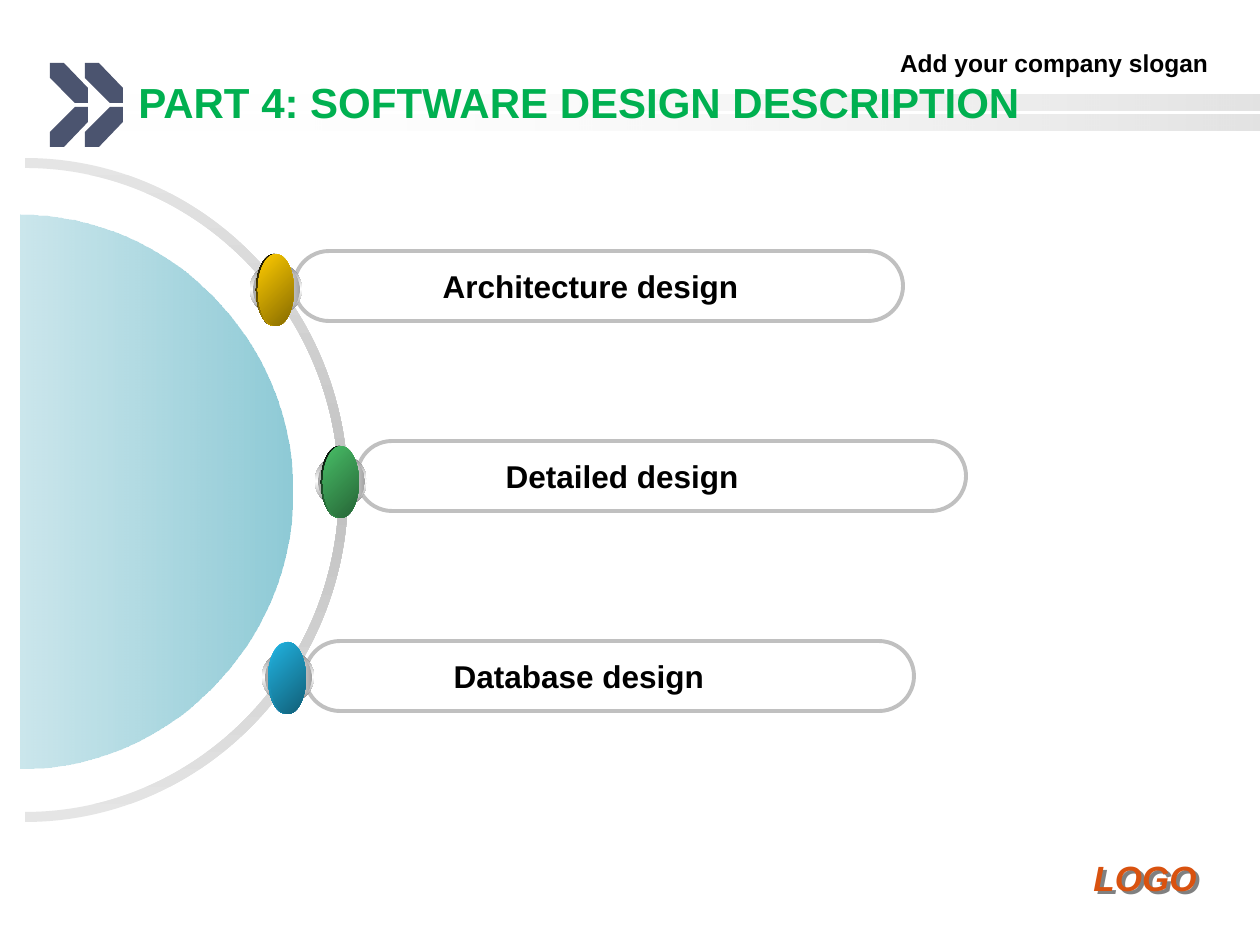
from lxml import etree
from pptx import Presentation, util as u
from pptx.dml.color import RGBColor
from pptx.enum import shapes, text
from pptx.oxml import parse_xml
from pptx.oxml.ns import qn, nsdecls

PX = u.Inches(1) / 126
NAVY = RGBColor(0x4B, 0x54, 0x6F)
GREEN = RGBColor(0x00, 0xB0, 0x50)
ORANGE = RGBColor(0xD9, 0x52, 0x0F)
BLACK = RGBColor(0, 0, 0)
SILVER = RGBColor(0xC0, 0xC0, 0xC0)


def paint(s, stops=None, angle=0, color=None):
    """Fill a shape with one colour or with (position, hex, alpha) stops."""
    s.shadow.inherit = False
    s.line.fill.background()
    if color is not None:
        s.fill.solid()
        s.fill.fore_color.rgb = color
        return
    s.fill.gradient()
    s.fill.gradient_angle = -angle % 360
    gs_list = next(s._element.iter(qn("a:gsLst")))
    for gs in list(gs_list):
        gs_list.remove(gs)
    for pos, rgb, alpha in stops:
        gs = etree.SubElement(gs_list, qn("a:gs"), pos=str(pos * 1000))
        clr = etree.SubElement(gs, qn("a:srgbClr"), val=rgb)
        if alpha < 100:
            etree.SubElement(clr, qn("a:alpha"), val=str(alpha * 1000))


def write(s, words, size, color, align=text.PP_ALIGN.LEFT,
          anchor=text.MSO_ANCHOR.TOP, italic=False):
    tf = s.text_frame
    tf.word_wrap = True
    tf.vertical_anchor = anchor
    p = tf.paragraphs[0]
    p.alignment = align
    r = p.add_run()
    r.text = words
    fmt = {"name": "Arial", "size": u.Pt(size), "bold": True, "italic": italic}
    for key, value in fmt.items():
        setattr(r.font, key, value)
    r.font.color.rgb = color


prs = Presentation()
prs.slide_width, prs.slide_height = u.Inches(10), u.Inches(7.5)
sp = prs.slides.add_slide(prs.slide_layouts[6]).shapes

# Header bars
for top in (95, 115):
    s = sp.add_shape(shapes.MSO_SHAPE.RECTANGLE,
                     *[int(v * PX) for v in (95, top, 1165, 16)])
    paint(s, [(0, "FFFFFF", 0), (100, "969696", 27)])

# Double chevron: upper arms and their mirror images
arm = [(50, 63), (50, 78), (75, 103), (88, 103), (88, 88), (64, 63)]
outlines = []
for dx in (0, 35):
    outlines.append([(x + dx, y) for x, y in arm])
    outlines.append([(x + dx, 210 - y) for x, y in arm])
for pts in outlines:
    fb = sp.build_freeform(*pts[0], scale=PX)
    fb.add_line_segments(pts[1:], close=True)
    paint(fb.convert_to_shape(), color=NAVY)

# Slogan, logo text with its shadow, and title
s = sp.add_textbox(*[int(v * PX) for v in (462, 42, 759, 42)])
write(s, "Add your company slogan", 14, BLACK, text.PP_ALIGN.RIGHT)
s = sp.add_textbox(*[int(v * PX) for v in (1081, 850, 147, 54)])
write(s, "LOGO", 20, ORANGE, italic=True)
s._element.spPr.append(parse_xml(
    f'<a:effectLst {nsdecls("a")}><a:outerShdw dist="35921" dir="2700000">'
    '<a:srgbClr val="808080"/></a:outerShdw></a:effectLst>'))
s = sp.add_textbox(*[int(v * PX) for v in (126, 63, 1040, 78)])
write(s, "PART 4: SOFTWARE DESIGN DESCRIPTION", 24, GREEN,
      anchor=text.MSO_ANCHOR.MIDDLE)

# Ring and half disc: half ellipses made of two quarter curves each
K = 0.55
half = [(0, -1), (K, -1), (1, -K), (1, 0), (1, K), (K, 1), (0, 1)]
ring = [(25 + 323 * x, 490 + 332 * y) for x, y in half]
ring += [(25 + 314 * x, 490 + 322 * y) for x, y in reversed(half)]
disc = [(21 + 271 * x, 492 + 277 * y) for x, y in half]
for pts, stops, angle in (
        (ring, [(0, "E5E5E5", 100), (50, "C0C0C0", 100),
                (100, "E5E5E5", 100)], 90),
        (disc, [(0, "36A1B6", 56), (100, "9BD0DB", 52)], 180)):
    fb = sp.build_freeform(*pts[0], scale=PX)
    fb.add_line_segments(pts[1:], close=True)
    s = fb.convert_to_shape()
    lines = list(s._element.iter(qn("a:lnTo")))
    for start in range(0, len(pts) - 1, 7):
        for i in (start, start + 3):
            curve = etree.Element(qn("a:cubicBezTo"))
            lines[i].addprevious(curve)
            for ln in lines[i:i + 3]:
                curve.append(ln[0])
                ln.getparent().remove(ln)
    paint(s, stops, angle)

# Pills with their labels; each bead sits at its pill's left end
# label, pill position, bead position, rim colours and angle, face colours
items = [
    ("Database design", (305, 641), (262, 651),
     ("21B3E1", "1880A1", 90), ("21B3E1", "115E76")),
    ("Detailed design", (357, 441), (315, 455),
     ("000000", "48BE67", 45), ("48BE67", "266436")),
    ("Architecture design", (294, 251), (250, 263),
     ("000000", "FFCC00", 45), ("FFCC00", "856A00")),
]
for label, (x, y), *_ in items:
    s = sp.add_shape(shapes.MSO_SHAPE.ROUNDED_RECTANGLE,
                     *[int(v * PX) for v in (x, y, 609, 70)])
    s.adjustments[0] = 0.5
    s.shadow.inherit = False
    s.fill.background()
    s.line.color.rgb = SILVER
    s.line.width = u.Pt(2.25)
    write(s, label, 18, BLACK, anchor=text.MSO_ANCHOR.MIDDLE)
    pPr = s.text_frame.paragraphs[0]._p.get_or_add_pPr()
    pPr.set("marL", str(int(126 * PX)))
    pPr.set("indent", "0")

for _, _, (x, y), (rim1, rim2, angle), (face1, face2) in reversed(items):
    layers = [
        (0, 0, 52, 52, ("828282", "FFFFFF", "828282"), 90),
        (3, 3, 47, 47, ("A5A5A5", "FFFFFF", "A5A5A5"), 0),
        (6, -9, 36, 72, (rim1, rim2), angle),
        (8, -9, 36, 72, (face1, face2), 45),
    ]
    for dx, dy, w, h, colors, turn in layers:
        s = sp.add_shape(shapes.MSO_SHAPE.OVAL,
                         *[int(v * PX) for v in (x + dx, y + dy, w, h)])
        step = 100 // (len(colors) - 1)
        paint(s, [(i * step, c, 100) for i, c in enumerate(colors)], turn)

prs.save("out.pptx")
